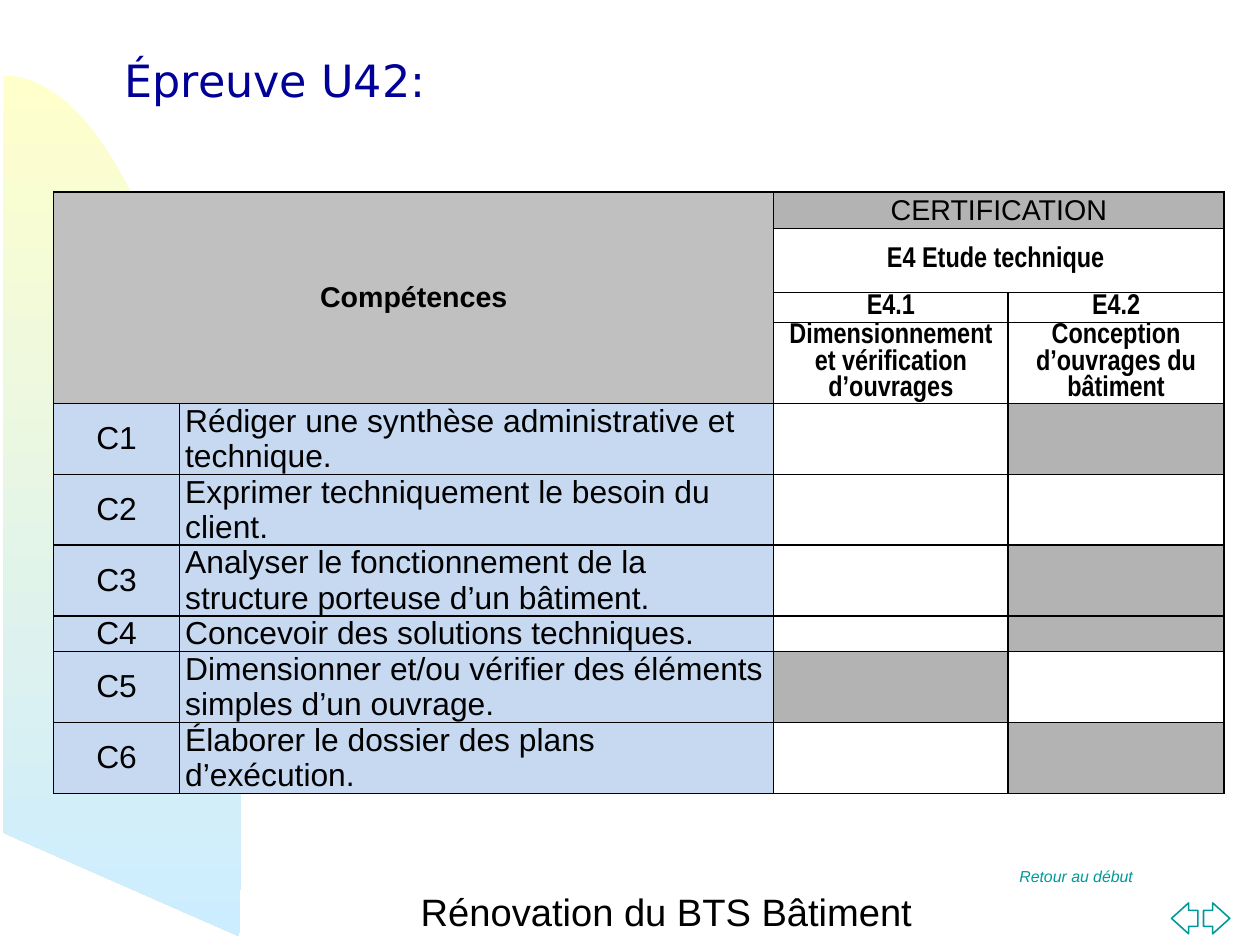
from lxml import etree
from pptx import Presentation
from pptx.dml.color import RGBColor
from pptx.enum.shapes import MSO_SHAPE
from pptx.enum.text import MSO_ANCHOR, MSO_AUTO_SIZE, PP_ALIGN
from pptx.oxml.ns import qn
from pptx.util import Cm, Inches, Pt

BLACK = RGBColor(0, 0, 0)
WHITE = RGBColor(255, 255, 255)
NAVY = RGBColor(0, 0, 0x99)
TEAL = RGBColor(0, 0x99, 0x99)
CREAM = RGBColor(0xFF, 0xFF, 0xCC)
SKY = RGBColor(0xCC, 0xEC, 0xFF)
SILVER = RGBColor(0xC0, 0xC0, 0xC0)
GREY = RGBColor(0xB3, 0xB3, 0xB3)
BLUE = RGBColor(0xC6, 0xD9, 0xF1)
LEFT, CENTER = PP_ALIGN.LEFT, PP_ALIGN.CENTER
MIDDLE = MSO_ANCHOR.MIDDLE
FIXED = MSO_AUTO_SIZE.NONE
ARROWS = (MSO_SHAPE.LEFT_ARROW, MSO_SHAPE.RIGHT_ARROW)
SANS, NARROW = "Arial", "Arial Narrow"

COLS = (1.1, 5.2, 2.05, 1.89)
ROWS = (0.32, 0.56, 0.26, 0.71, 0.62, 0.62, 0.62, 0.31, 0.62, 0.62)
HEADS = (  # row, column, last row, last column, text, font, bold, fill
    (0, 0, 3, 1, "Compétences", SANS, True, SILVER),
    (0, 2, 0, 3, "CERTIFICATION", SANS, False, GREY),
    (1, 2, 1, 3, "E4 Etude technique ", NARROW, True, None),
    (2, 2, 2, 2, "E4.1", NARROW, True, None),
    (2, 3, 2, 3, "E4.2", NARROW, True, None),
    (3, 2, 3, 2, "Dimensionnement et vérification d’ouvrages",
     NARROW, True, None),
    (3, 3, 3, 3, "Conception d’ouvrages du bâtiment", NARROW, True, None),
)
SKILLS = (  # text, shaded column
    ("Rédiger une synthèse administrative et technique.", 3),
    ("Exprimer techniquement le besoin du client.", None),
    ("Analyser le fonctionnement de la structure porteuse d’un bâtiment.", 3),
    ("Concevoir des solutions techniques.", 3),
    ("Dimensionner et/ou vérifier des éléments simples d’un ouvrage.", 2),
    ("Élaborer le dossier des plans d’exécution.", 3),
)


def inches(box):
    return [Inches(v) for v in box]


def write(frame, text, size, color=BLACK, font=SANS, bold=False,
          italic=False, align=CENTER):
    para = frame.paragraphs[0]
    para.alignment = align
    run = para.add_run()
    run.text = text
    face = run.font
    face.name, face.size = font, Pt(size)
    face.bold, face.italic = bold, italic
    face.color.rgb = color
    return para


def label(slide, box, text, size, **style):
    frame = slide.shapes.add_textbox(*inches(box)).text_frame
    frame.word_wrap = True
    return write(frame, text, size, **style)


def bezier(a, b, c, d, steps=40):
    for i in range(1, steps + 1):
        t = i / steps
        u = 1 - t
        yield tuple(u**3 * p + 3 * u * u * t * q + 3 * u * t * t * r + t**3 * s
                    for p, q, r, s in zip(a, b, c, d))


def add_wave(slide, box):
    x, y, w, h = inches(box)
    edge = list(bezier((0, 0), (0.55, 0), (1, 0.39), (1, 0.88)))
    edge += bezier((1, 0.88), (1, 0.92), (1, 0.96), (0.99, 1))
    edge.append((0, 0.88))
    path = slide.shapes.build_freeform(x, y)
    path.add_line_segments([(x + w * a, y + h * b) for a, b in edge])
    wave = path.convert_to_shape()
    wave.shadow.inherit = False
    wave.line.fill.background()
    wave.fill.gradient()
    wave.fill.gradient_angle = 270
    for stop, color, pos in zip(wave.fill.gradient_stops, (CREAM, SKY), (0, 1)):
        stop.color.rgb = color
        stop.position = pos


def add_title(slide, box):
    title = slide.shapes.title
    title.left, title.top, title.width, title.height = inches(box)
    frame = title.text_frame
    frame.auto_size = FIXED
    frame.vertical_anchor = MIDDLE
    frame.margin_left = frame.margin_right = 0
    frame.margin_top = frame.margin_bottom = 0
    write(frame, "Épreuve U42:", 28, NAVY, "DejaVu Sans")


def border(cell):
    props = cell._tc.get_or_add_tcPr()
    for i, side in enumerate(("lnL", "lnR", "lnT", "lnB")):
        line = etree.Element(qn("a:" + side), w=str(Pt(1)))
        fill = etree.SubElement(line, qn("a:solidFill"))
        etree.SubElement(fill, qn("a:srgbClr"), val=str(BLACK))
        props.insert(i, line)


def paint(cell, color):
    if color is None:
        cell.fill.background()
    else:
        cell.fill.solid()
        cell.fill.fore_color.rgb = color


def add_grid(slide, box):
    shape = slide.shapes.add_table(len(ROWS), len(COLS), *inches(box))
    table = shape.table
    table.first_row = table.horz_banding = False
    for col, width in zip(table.columns, COLS):
        col.width = Inches(width)
    for row, height in zip(table.rows, ROWS):
        row.height = Inches(height)
    for cell in table.iter_cells():
        cell.vertical_anchor = MIDDLE
        cell.margin_left = cell.margin_right = Inches(0.05)
        cell.margin_top = cell.margin_bottom = 0
        paint(cell, None)
        border(cell)

    for r, c, last_r, last_c, text, font, bold, color in HEADS:
        cell = table.cell(r, c)
        if (r, c) != (last_r, last_c):
            cell.merge(table.cell(last_r, last_c))
        paint(cell, color)
        write(cell.text_frame, text, 18, font=font, bold=bold)

    for i, (text, shade) in enumerate(SKILLS):
        code, name = (table.cell(4 + i, c) for c in (0, 1))
        write(code.text_frame, f"C{i + 1}", 20)
        write(name.text_frame, text, 20, align=LEFT)
        paint(code, BLUE)
        paint(name, BLUE)
        if shade is not None:
            paint(table.cell(4 + i, shade), GREY)


def add_arrows(slide, box):
    x, y, w, h = box
    size = 0.23
    for kind, left in zip(ARROWS, (x, x + w - size)):
        arrow = slide.shapes.add_shape(kind, *inches((left, y, size, h)))
        arrow.adjustments[0] = 0.52
        arrow.adjustments[1] = 0.65
        arrow.shadow.inherit = False
        arrow.fill.solid()
        arrow.fill.fore_color.rgb = WHITE
        arrow.line.color.rgb = TEAL
        arrow.line.width = Pt(1)


def add_footer(slide, box):
    x, y, w, h = box
    label(slide, (x, y + 0.19, 5.42, h), "Rénovation du BTS Bâtiment", 24)
    back = label(slide, (x + 5.7, y, 1.85, h), "Retour au début", 10,
                 color=TEAL, italic=True, align=LEFT)
    back.space_before = Pt(2.5)
    add_arrows(slide, (x + w - 0.51, y + 0.37, 0.51, 0.27))


def main():
    deck = Presentation()
    deck.slide_width = Cm(28)
    deck.slide_height = Cm(21)
    slide = deck.slides.add_slide(deck.slide_layouts[5])
    add_wave(slide, (0.03, 0.66, 2.08, 7.53))
    add_grid(slide, (0.47, 1.68, sum(COLS), sum(ROWS)))
    add_title(slide, (0.08, 0.29, 4.65, 0.81))
    add_footer(slide, (3.12, 7.53, 7.64, 0.73))
    deck.save("out.pptx")


if __name__ == "__main__":
    main()
